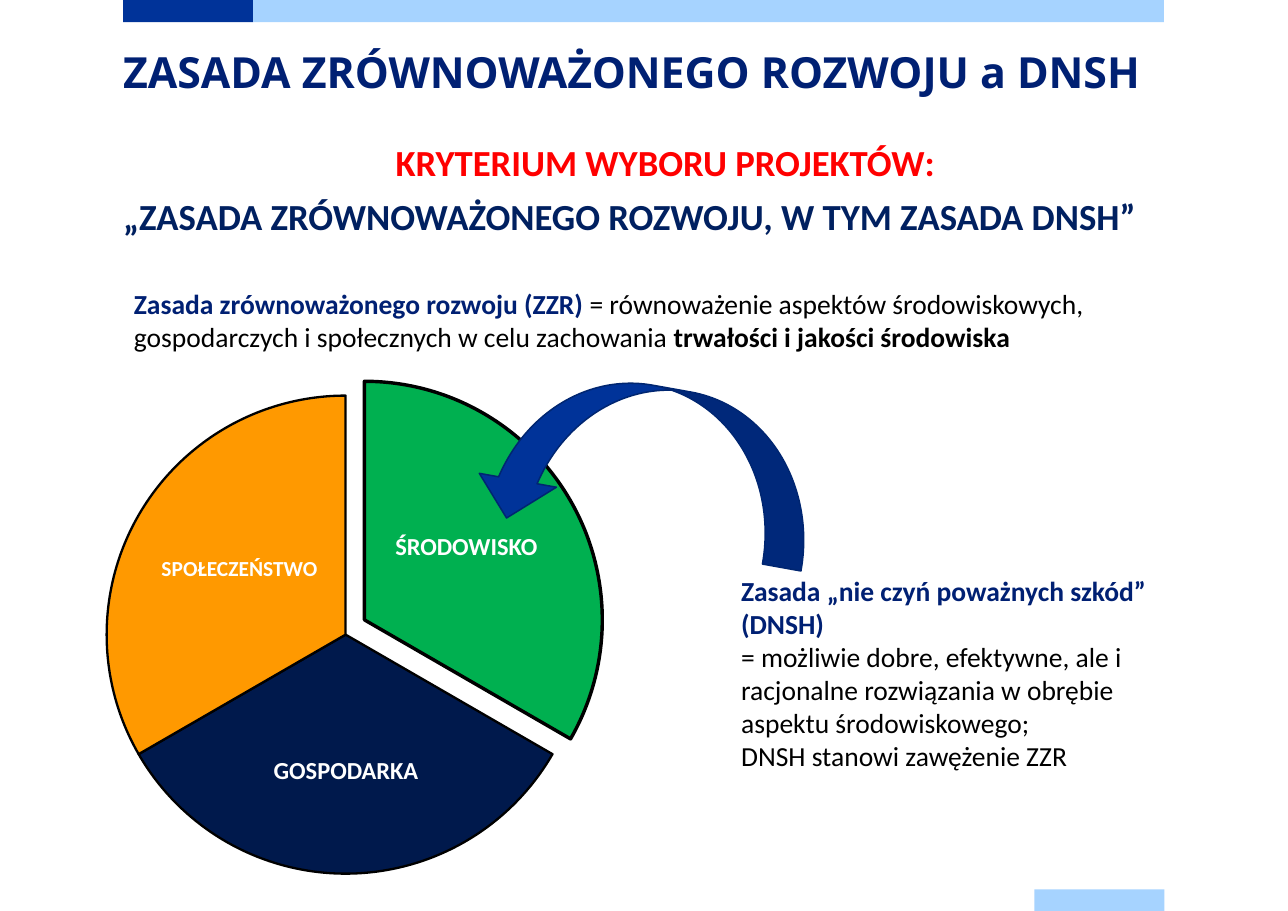
from dataclasses import dataclass

from pptx import Presentation
from pptx.dml.color import RGBColor
from pptx.enum.shapes import MSO_SHAPE
from pptx.enum.text import MSO_ANCHOR, PP_ALIGN
from pptx.shapes.autoshape import Shape
from pptx.slide import Slide
from pptx.util import Cm, Pt


@dataclass(frozen=True)
class Theme:
    blue: str = "003399"
    sky: str = "A6D3FF"
    title: str = "002073"
    quote: str = "002060"
    edge: str = "002671"
    red: str = "FF0000"
    green: str = "00B050"
    navy: str = "00194C"
    orange: str = "FF9900"
    black: str = "000000"
    white: str = "FFFFFF"
    head: str = "Open Sans"
    body: str = "Calibri"
    huge: int = 28
    large: int = 24
    text: int = 18
    label: int = 16
    small: int = 14


THEME = Theme()


@dataclass(frozen=True)
class Box:
    left: float
    top: float
    width: float
    height: float

    def cm(self) -> tuple[Cm, Cm, Cm, Cm]:
        return Cm(self.left), Cm(self.top), Cm(self.width), Cm(self.height)


@dataclass(frozen=True)
class Span:
    text: str
    color: str = THEME.black
    bold: bool = True
    size: int = THEME.text
    font: str = THEME.body


@dataclass(frozen=True)
class Line:
    spans: tuple[Span, ...]
    align: PP_ALIGN = PP_ALIGN.LEFT
    pitch: Pt | float | None = None
    before: float = 0


@dataclass(frozen=True)
class Bar:
    box: Box
    color: str


@dataclass(frozen=True)
class Slice:
    name: str
    box: Box
    start: int
    end: int
    color: str
    label: Box
    size: int = THEME.label
    edge: float = 1.5


def add_form(slide: Slide, kind: MSO_SHAPE, box: Box, color: str,
             edge: str = "", width: float = 0) -> Shape:
    form = slide.shapes.add_shape(kind, *box.cm())
    form.shadow.inherit = False
    form.fill.solid()
    form.fill.fore_color.rgb = RGBColor.from_string(color)
    if edge:
        form.line.color.rgb = RGBColor.from_string(edge)
        form.line.width = Pt(width)
    else:
        form.line.fill.background()
    return form


def add_text(slide: Slide, box: Box, lines: list[Line], inset: bool = False,
             anchor: MSO_ANCHOR = MSO_ANCHOR.TOP) -> None:
    frame = slide.shapes.add_textbox(*box.cm()).text_frame
    frame.word_wrap = True
    frame.vertical_anchor = anchor
    if not inset:
        frame.margin_left = frame.margin_right = 0
        frame.margin_top = frame.margin_bottom = 0
    for index, line in enumerate(lines):
        para = frame.add_paragraph() if index else frame.paragraphs[0]
        para.alignment = line.align
        if line.pitch:
            para.line_spacing = line.pitch
        if line.before:
            para.space_before = Pt(line.before)
        for span in line.spans:
            run = para.add_run()
            run.text = span.text
            run.font.name = span.font
            run.font.size = Pt(span.size)
            run.font.bold = span.bold
            run.font.color.rgb = RGBColor.from_string(span.color)


def add_slice(slide: Slide, part: Slice) -> None:
    pie = add_form(slide, MSO_SHAPE.PIE, part.box, part.color, THEME.black, part.edge)
    # Angles are stored in 60000ths of a degree, adjustments in 100000ths
    pie.adjustments[0] = part.start * 0.6
    pie.adjustments[1] = part.end * 0.6
    span = Span(part.name, THEME.white, size=part.size)
    add_text(slide, part.label, [Line((span,), PP_ALIGN.CENTER, 0.9)],
             anchor=MSO_ANCHOR.MIDDLE)


RING = Box(2.46, 9.12, 11.02, 11.02)
BARS = [
    Bar(Box(2.84, 0, 3, 0.51), THEME.blue),
    Bar(Box(5.84, 0, 21, 0.51), THEME.sky),
    Bar(Box(23.85, 20.5, 3, 0.51), THEME.sky),
]
SLICES = [
    Slice("ŚRODOWISKO", Box(2.92, 8.79, 10.97, 11), 270, 30, THEME.green,
          Box(8.89, 10.8, 3.73, 3.66), edge=2.25),
    Slice("GOSPODARKA", RING, 30, 150, THEME.navy, Box(5.49, 16.08, 4.98, 3.4)),
    Slice("SPOŁECZEŃSTWO", RING, 150, 270, THEME.orange,
          Box(3.66, 11.28, 3.73, 3.68), THEME.small),
]


def main() -> None:
    deck = Presentation()
    deck.slide_width, deck.slide_height = Cm(29.7), Cm(21)
    slide = deck.slides.add_slide(deck.slide_layouts[6])

    # Page bars
    for bar in BARS:
        add_form(slide, MSO_SHAPE.RECTANGLE, bar.box, bar.color)

    # Title
    title = Span("ZASADA ZRÓWNOWAŻONEGO ROZWOJU a DNSH", THEME.title,
                 size=THEME.huge, font=THEME.head)
    add_text(slide, Box(0.03, 0.98, 29.06, 1.6),
             [Line((title,), PP_ALIGN.CENTER, Pt(36))])

    # Criterion
    lead = Span("KRYTERIUM WYBORU PROJEKTÓW:", THEME.red, size=THEME.large)
    quote = Span("„ZASADA ZRÓWNOWAŻONEGO ROZWOJU, W TYM ZASADA DNSH”",
                 THEME.quote, size=THEME.large)
    add_text(slide, Box(2.84, 3.4, 25, 2.9), [
        Line((lead,), PP_ALIGN.CENTER, Pt(24)),
        Line((quote,), pitch=Pt(24), before=11),
    ])

    # Definition of the principle
    add_text(slide, Box(2.84, 6.5, 25.4, 1.8), [Line((
        Span("Zasada zrównoważonego rozwoju (ZZR) ", THEME.title),
        Span("= równoważenie aspektów środowiskowych, gospodarczych i "
             "społecznych w celu zachowania ", bold=False),
        Span("trwałości i jakości środowiska"),
    ))], inset=True)

    # Three aspects
    for part in SLICES:
        add_slice(slide, part)

    # Arrow to the environment slice
    arrow = add_form(slide, MSO_SHAPE.CURVED_UP_ARROW, Box(11.05, 8.89, 7.8, 3.61),
                     THEME.blue, THEME.edge, 1)
    arrow.rotation = 190.2

    # Definition of DNSH
    add_text(slide, Box(16.84, 13.11, 10.21, 4.88), [
        Line((Span("Zasada „nie czyń poważnych szkód” (DNSH)", THEME.title),)),
        Line((Span("= możliwie dobre, efektywne, ale i racjonalne rozwiązania "
                   "w obrębie aspektu środowiskowego;", bold=False),)),
        Line((Span("DNSH stanowi zawężenie ZZR", bold=False),)),
    ], inset=True)

    deck.save("out.pptx")


if __name__ == "__main__":
    main()
